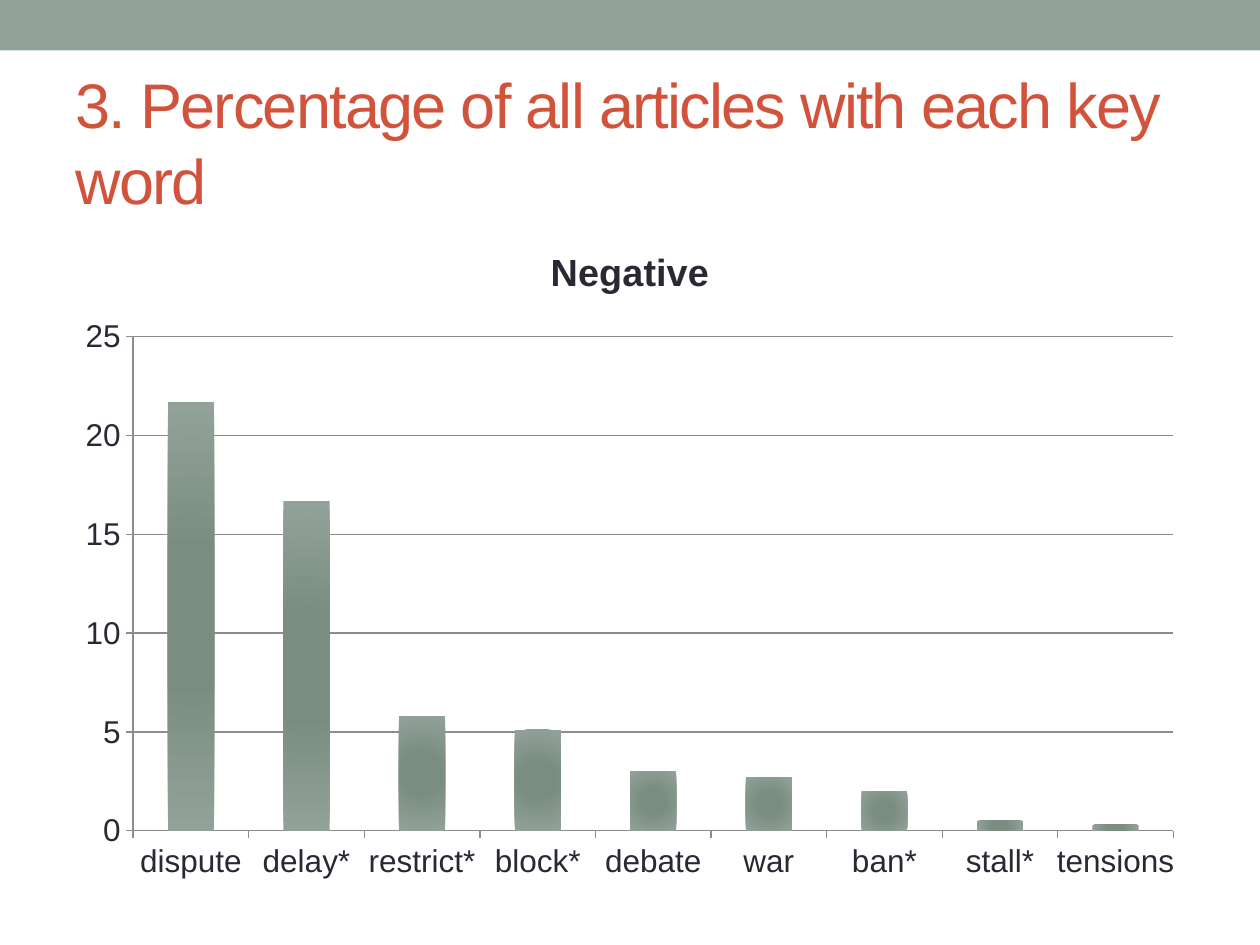
"""Build a slide with a column chart of negative key words."""
from lxml import etree
from pptx import Presentation
from pptx.chart.data import CategoryChartData
from pptx.dml.color import RGBColor
from pptx.enum.chart import XL_CHART_TYPE as CT, XL_TICK_MARK as TM
from pptx.enum.shapes import MSO_SHAPE
from pptx.enum.text import MSO_ANCHOR, PP_ALIGN
from pptx.oxml import parse_xml
from pptx.oxml.ns import nsdecls
from pptx.util import Inches, Pt

SAGE = RGBColor(0x93, 0xA2, 0x99)
DARK_SAGE = RGBColor(0x7A, 0x8D, 0x80)
RUST = RGBColor(0xD2, 0x53, 0x3C)
INK = RGBColor(0x29, 0x29, 0x34)
GREY = RGBColor(0x8C, 0x8C, 0x8C)
FONT = "Arial"
VALUES = {
    "dispute": 21.7, "delay*": 16.7, "restrict*": 5.8, "block*": 5.1,
    "debate": 3, "war": 2.7, "ban*": 2, "stall*": 0.5, "tensions": 0.3,
}


def add_text(tf, text, size, color, bold=False, spacing=0, align=None):
    p = tf.paragraphs[0]
    p.alignment = align
    r = p.add_run()
    r.text = text
    r.font.name = FONT
    r.font.size = Pt(size)
    r.font.bold = bold
    r.font.color.rgb = color
    if spacing:
        r.font._element.set("spc", str(spacing * 100))


prs = Presentation()
prs.slide_width, prs.slide_height = Inches(10), Inches(7.5)
s = prs.slides.add_slide(prs.slide_layouts[5])

band = s.shapes.add_shape(MSO_SHAPE.RECTANGLE, 0, 0, prs.slide_width, Inches(0.4))
band.shadow.inherit = False
band.fill.solid()
band.fill.fore_color.rgb = SAGE
band.line.fill.background()

title = s.shapes.title
title.left, title.top = Inches(0.5), Inches(0.58)
title.width, title.height = Inches(9), Inches(1.08)
tf = title.text_frame
tf.word_wrap = True
tf.vertical_anchor = MSO_ANCHOR.MIDDLE
add_text(tf, "3. Percentage of all articles with each key word", 36, RUST,
         spacing=-1, align=PP_ALIGN.LEFT)

data = CategoryChartData()
data.categories = list(VALUES)
data.add_series("Series 1", list(VALUES.values()))
chart = s.shapes.add_chart(CT.COLUMN_CLUSTERED, Inches(0.5), Inches(1.75),
                           Inches(9), Inches(5.33), data).chart
chart.has_legend = False
chart.font.name = FONT
chart.font.size = Pt(18)
chart.font.color.rgb = INK
chart.has_title = True
add_text(chart.chart_title.text_frame, "Negative", 21.6, INK, bold=True)
chart.chart_title.include_in_layout = False

for axis in (chart.category_axis, chart.value_axis):
    axis.major_tick_mark = TM.OUTSIDE
    axis.minor_tick_mark = TM.NONE
    axis.format.line.color.rgb = GREY
    axis.format.line.width = Pt(0.75)
axis = chart.value_axis
axis.minimum_scale, axis.maximum_scale, axis.major_unit = 0, 25, 5
axis.has_major_gridlines = True
axis.major_gridlines.format.line.color.rgb = GREY
axis.major_gridlines.format.line.width = Pt(0.75)

plot = chart.plots[0]
plot.gap_width = 150
plot.vary_by_categories = False
bars = plot.series[0]
bars.invert_if_negative = False
bars.format.fill.solid()
bars.format.fill.fore_color.rgb = SAGE
solid = bars._element.spPr.find("{*}solidFill")
gradient = parse_xml(f'<a:gradFill {nsdecls("a")} rotWithShape="1"><a:gsLst/></a:gradFill>')
for pos, color in ((0, DARK_SAGE), (30000, DARK_SAGE), (100000, SAGE)):
    stop = etree.SubElement(gradient[0], gradient[0].tag.replace("gsLst", "gs"), pos=str(pos))
    etree.SubElement(stop, stop.tag.replace("}gs", "}srgbClr"), val=str(color))
gradient.append(parse_xml(
    f'<a:path {nsdecls("a")} path="circle">'
    '<a:fillToRect l="50000" t="50000" r="50000" b="50000"/></a:path>'))
solid.getparent().replace(solid, gradient)

prs.save("out.pptx")
